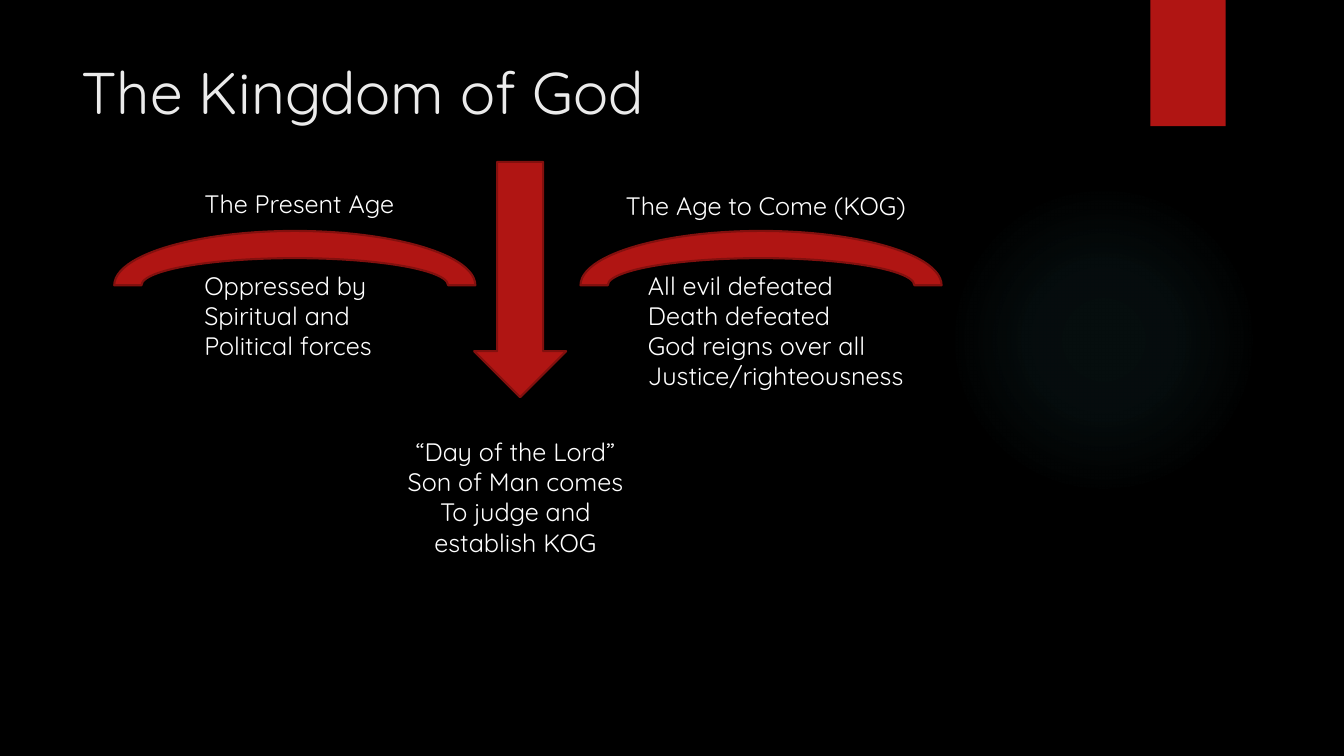
from lxml import etree
from pptx import Presentation
from pptx.dml.color import RGBColor
from pptx.enum import shapes, text
from pptx.oxml import ns
from pptx.util import Cm, Pt

RED, DARK_RED, WHITE = "B01513", "82100E", "FFFFFF"


def paint(color_format, hex_color):
    color_format.rgb = RGBColor.from_string(hex_color)


def add_text(place, lines, size=18, color=WHITE, align=text.PP_ALIGN.LEFT):
    frame = slide.shapes.add_textbox(*map(Cm, place)).text_frame
    frame.word_wrap = False
    frame.text = "\n".join(lines)
    for paragraph in frame.paragraphs:
        paragraph.alignment = align
        paragraph.font.name = "Quicksand"
        paragraph.font.size = Pt(size)
        paint(paragraph.font.color, color)


prs = Presentation()
prs.slide_width, prs.slide_height = Cm(33.87), Cm(19.05)
slide = prs.slides.add_slide(prs.slide_layouts[6])
slide.background.fill.solid()
paint(slide.background.fill.fore_color, "000000")

# Faint round glow, fading outwards
glow = slide.shapes.add_shape(shapes.MSO_SHAPE.OVAL, Cm(23.9), Cm(4.65), Cm(7.82), Cm(7.82))
glow.shadow.inherit = False
glow.line.fill.background()
glow.fill.gradient()
gradient = glow.fill._xPr.find(ns.qn("a:gradFill"))
for child in list(gradient):
    gradient.remove(child)
stops = etree.SubElement(gradient, ns.qn("a:gsLst"))
for position, opacity in ((0, 7), (36, 6), (69, 0)):
    stop = etree.SubElement(stops, ns.qn("a:gs"), pos=str(position * 1000))
    tint = etree.SubElement(stop, ns.qn("a:srgbClr"), val="50B9C1")
    etree.SubElement(tint, ns.qn("a:alpha"), val=str(opacity * 1000))
focus = etree.SubElement(gradient, ns.qn("a:path"), path="circle")
etree.SubElement(focus, ns.qn("a:fillToRect"), dict.fromkeys("ltrb", "50000"))

# Red tab, an arc over each age, and the arrow between them
ARC = shapes.MSO_SHAPE.BLOCK_ARC
for kind, place, outlined in (
    (shapes.MSO_SHAPE.RECTANGLE, (28.99, 0, 1.9, 3.18), False),
    (ARC, (2.88, 5.82, 9.1, 2.74), True),
    (ARC, (14.63, 5.82, 9.1, 2.74), True),
    (shapes.MSO_SHAPE.DOWN_ARROW, (11.95, 4.08, 2.32, 5.93), True),
):
    red_shape = slide.shapes.add_shape(kind, *map(Cm, place))
    red_shape.shadow.inherit = False
    red_shape.fill.solid()
    paint(red_shape.fill.fore_color, RED)
    if outlined:
        paint(red_shape.line.color, DARK_RED)
        red_shape.line.width = Pt(1.5)
    else:
        red_shape.line.fill.background()

# Title
add_text((1.8, 1.27, 26.14, 3.89), ["The Kingdom of God"], 42, "EBEBEB")

# The present age
add_text((4.9, 4.62, 5.54, 1.02), ["The Present Age"])
add_text((4.9, 6.68, 4.98, 2.57), ["Oppressed by", "Spiritual and", "Political forces"])

# The age to come
add_text((15.52, 4.67, 8.2, 1.02), ["The Age to Come (KOG)"])
add_text((16.08, 6.68, 7.06, 3.33),
         ["All evil defeated", "Death defeated", "God reigns over all", "Justice/righteousness"])

# The turning point
add_text((9.83, 10.87, 6.32, 3.33),
         ["“Day of the Lord”", "Son of Man comes", "To judge and", "establish KOG"],
         align=text.PP_ALIGN.CENTER)

prs.save("out.pptx")
